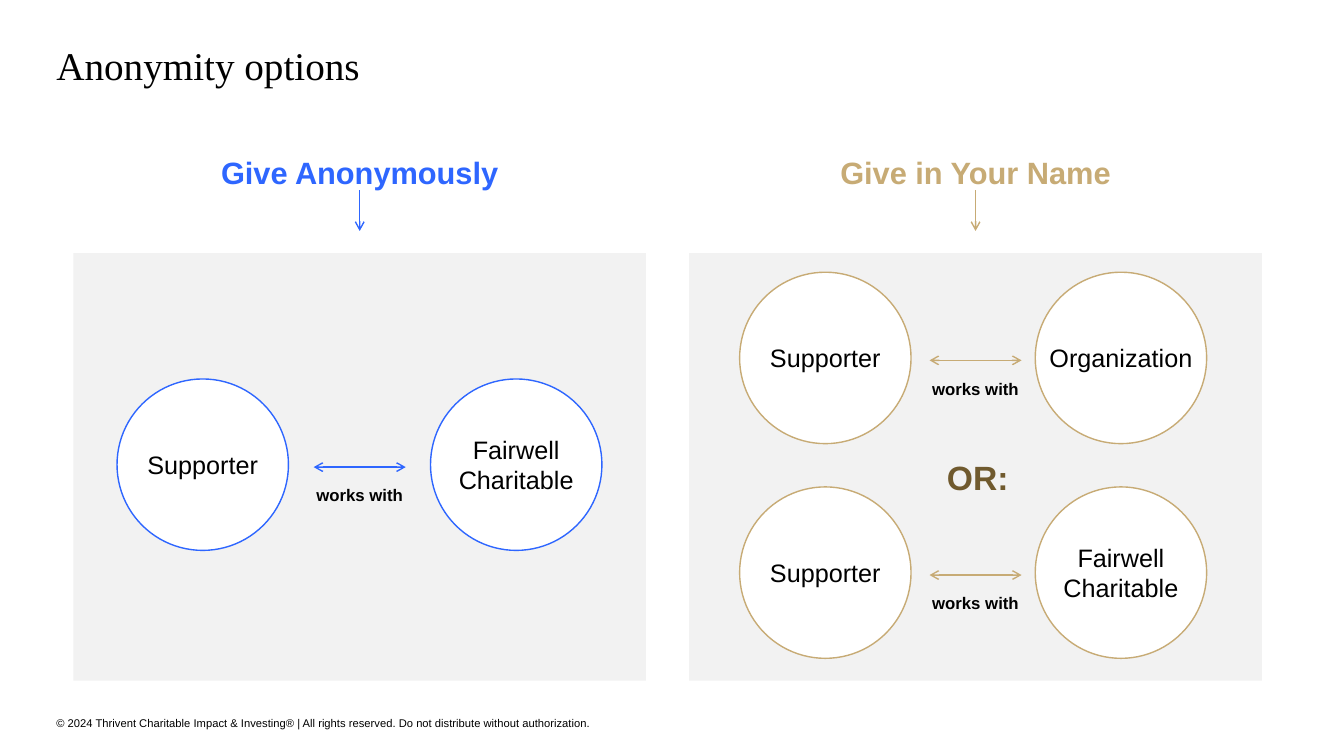
from lxml import etree
from pptx import Presentation
from pptx.dml.color import RGBColor
from pptx.enum.shapes import MSO_CONNECTOR, MSO_SHAPE
from pptx.enum.text import MSO_ANCHOR, MSO_AUTO_SIZE, PP_ALIGN
from pptx.oxml.ns import qn
from pptx.util import Cm, Pt

STRAIGHT = MSO_CONNECTOR.STRAIGHT
RECTANGLE, OVAL = MSO_SHAPE.RECTANGLE, MSO_SHAPE.OVAL
TOP, MIDDLE = MSO_ANCHOR.TOP, MSO_ANCHOR.MIDDLE
LEFT, CENTER = PP_ALIGN.LEFT, PP_ALIGN.CENTER
COLORS = {
    "blue": "2E66FF",
    "gold": "C7AB75",
    "brown": "705A2E",
    "panel": "F2F2F2",
    "white": "FFFFFF",
    "black": "000000",
}
PANEL_TOP, PANEL_WIDTH, PANEL_HEIGHT = 6.38, 14.43, 10.77
HEADING_WIDTH, LABEL_WIDTH = 15.26, 3.66
CIRCLE_SIZE = 4.32
ARROW_LENGTH = 2.32
PARTNER = "Fairwell\vCharitable"

presentation = Presentation()
presentation.slide_width, presentation.slide_height = Cm(33.87), Cm(19.05)
slide = presentation.slides.add_slide(presentation.slide_layouts[5])
shapes = slide.shapes


def add_text(left, top, width, height, text, size, color, bold=True):
    box = shapes.add_textbox(Cm(left), Cm(top), Cm(width), Cm(height))
    box.text_frame.word_wrap = True
    paragraph = box.text_frame.paragraphs[0]
    paragraph.text = text
    paragraph.alignment = CENTER
    font = paragraph.font
    font.name, font.size, font.bold = "Arial", Pt(size), bold
    font.color.rgb = RGBColor.from_string(COLORS[color])
    return box


def add_arrow(x1, y1, x2, y2, color, ends):
    """Draw a line with open arrowheads at the given ends (headEnd, tailEnd)."""
    arrow = shapes.add_connector(STRAIGHT, Cm(x1), Cm(y1), Cm(x2), Cm(y2))
    arrow.line.color.rgb = RGBColor.from_string(COLORS[color])
    arrow.line.width = Pt(1)
    line = arrow.line._get_or_add_ln()
    for end in ends:
        etree.SubElement(line, qn(f"a:{end}"), type="arrow")
    etree.SubElement(arrow._element.spPr, qn("a:effectLst"))


# Title
title = shapes.title
title.left, title.top, title.width, title.height = Cm(1.42), Cm(1.17), Cm(31.04), Cm(2.36)
frame = title.text_frame
frame.margin_left = frame.margin_top = frame.margin_right = frame.margin_bottom = 0
frame.auto_size = MSO_AUTO_SIZE.NONE
frame.vertical_anchor = TOP
paragraph = frame.paragraphs[0]
paragraph.text = "Anonymity options"
paragraph.alignment = LEFT
paragraph.line_spacing = 0.9
paragraph.font.name, paragraph.font.size = "Times New Roman", Pt(28)
paragraph.font.color.rgb = RGBColor.from_string(COLORS["black"])

# Options: heading, color, panel left, circle lefts, rows of (circle top, partner)
options = [
    ("Give Anonymously", "blue", 1.85, (2.95, 10.85), [(9.55, PARTNER)]),
    ("Give in Your Name", "gold", 17.37, (18.64, 26.09),
     [(6.86, "Organization"), (12.27, PARTNER)]),
]
for heading, color, panel_left, circle_lefts, rows in options:
    center = panel_left + PANEL_WIDTH / 2
    panel = shapes.add_shape(RECTANGLE, Cm(panel_left), Cm(PANEL_TOP),
                             Cm(PANEL_WIDTH), Cm(PANEL_HEIGHT))
    panel.shadow.inherit = False
    panel.fill.solid()
    panel.fill.fore_color.rgb = RGBColor.from_string(COLORS["panel"])
    panel.line.fill.background()

    add_text(center - HEADING_WIDTH / 2, 3.76, HEADING_WIDTH, 1.19, heading, 22, color)
    add_arrow(center, 4.8, center, 5.82, color, ["tailEnd"])

    for circle_top, partner in rows:
        for circle_left, name in zip(circle_lefts, ("Supporter", partner)):
            circle = shapes.add_shape(OVAL, Cm(circle_left), Cm(circle_top),
                                      Cm(CIRCLE_SIZE), Cm(CIRCLE_SIZE))
            circle.shadow.inherit = False
            circle.fill.solid()
            circle.fill.fore_color.rgb = RGBColor.from_string(COLORS["white"])
            circle.line.color.rgb = RGBColor.from_string(COLORS[color])
            circle.line.width = Pt(1)
            frame = circle.text_frame
            frame.word_wrap = False
            frame.vertical_anchor = MIDDLE
            paragraph = frame.paragraphs[0]
            paragraph.text = name
            paragraph.alignment = CENTER
            paragraph.font.name, paragraph.font.size = "Arial", Pt(18)
            paragraph.font.color.rgb = RGBColor.from_string(COLORS["black"])

        arrow_y = circle_top + 2.22
        add_arrow(center - ARROW_LENGTH / 2, arrow_y, center + ARROW_LENGTH / 2, arrow_y,
                  color, ["headEnd", "tailEnd"])
        add_text(center - LABEL_WIDTH / 2, circle_top + 2.55, LABEL_WIDTH, 0.76,
                 "works with", 12, "black")

add_text(22.81, 11.38, LABEL_WIDTH, 1.27, "OR:", 24, "brown")

# Copyright line
footer = add_text(
    1.42, 18.01, 15.49, 0.41,
    "© 2024 Thrivent Charitable Impact & Investing® | All rights reserved. "
    "Do not distribute without authorization.",
    8, "black", bold=False)
frame = footer.text_frame
frame.margin_left = frame.margin_top = frame.margin_right = frame.margin_bottom = 0
frame.vertical_anchor = MIDDLE
frame.paragraphs[0].alignment = LEFT

presentation.save("out.pptx")
